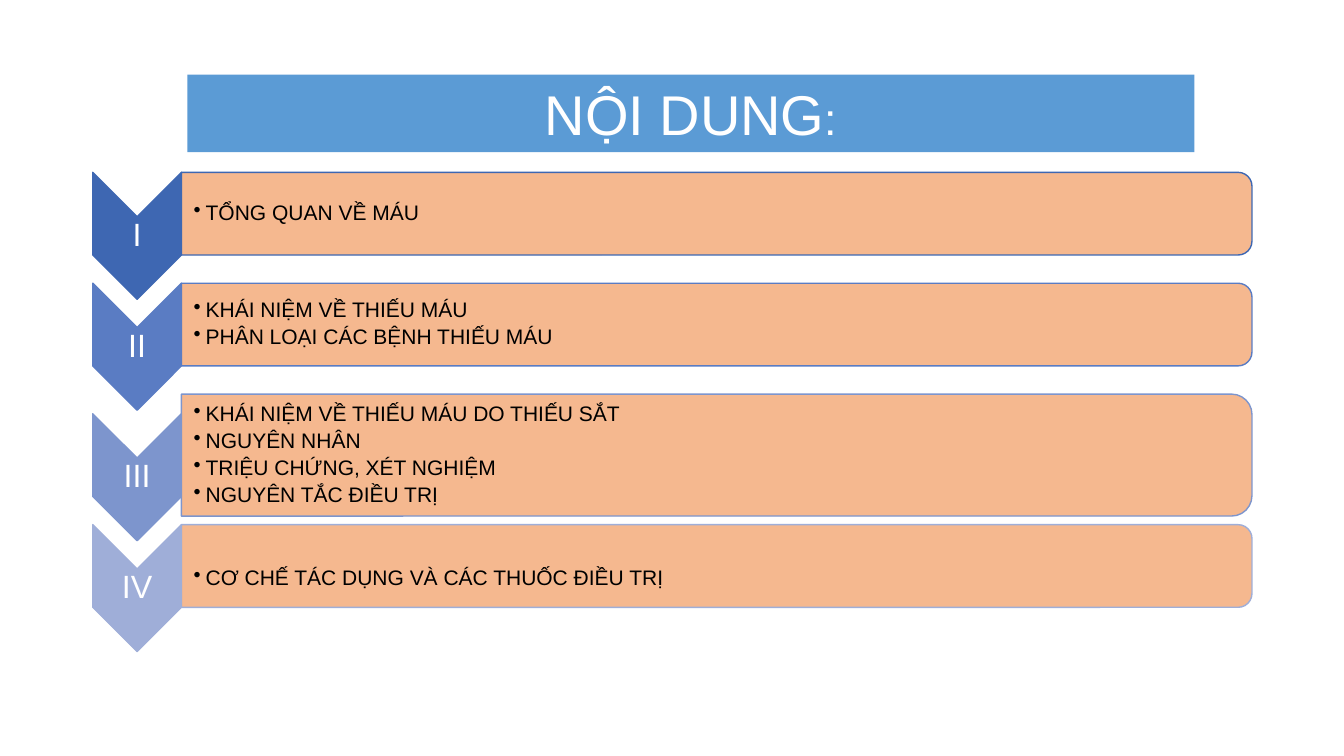
from collections import namedtuple
from pptx import Presentation
from pptx.dml.color import RGBColor
from pptx.enum.shapes import MSO_SHAPE
from pptx.enum.text import MSO_ANCHOR, PP_ALIGN
from pptx.oxml.ns import qn
from pptx.util import Inches, Pt
from lxml.etree import SubElement

Box = namedtuple("Box", "x y w h")

CELL = Inches(0.1)  # side of one grid square
COLS, ROWS = 133.33, 75


class Theme:
    font = "Arial"
    white, black = "FFFFFF", "000000"
    banner, bar = "5B9BD5", "F4B183"
    steps = ["3E67B2", "5A7CC3", "7D95CD", "9FAED8"]
    title, colon, mark, item = 40, 32, 23, 15


TOPICS = [
    ("I", ["TỔNG QUAN VỀ MÁU"]),
    ("II", ["KHÁI NIỆM VỀ THIẾU MÁU", "PHÂN LOẠI CÁC BỆNH THIẾU MÁU"]),
    ("III", ["KHÁI NIỆM VỀ THIẾU MÁU DO THIẾU SẮT", "NGUYÊN NHÂN",
             "TRIỆU CHỨNG, XÉT NGHIỆM", "NGUYÊN TẮC ĐIỀU TRỊ"]),
    ("IV", ["CƠ CHẾ TÁC DỤNG VÀ CÁC THUỐC ĐIỀU TRỊ"]),
]


def grid(*cells):
    return [round(n * CELL) for n in cells]


def shape(parts, kind, box, fill, line=None, turn=False, alpha=None):
    """Draw a preset that fills the box, even when turned by 90 degrees."""
    x, y, w, h = box
    if turn:
        x, y, w, h = x + (w - h) / 2, y + (h - w) / 2, h, w
    item = parts.add_shape(kind, *grid(x, y, w, h))
    item.rotation = 90 if turn else 0
    item.shadow.inherit = False
    item.fill.solid()
    item.fill.fore_color.rgb = RGBColor.from_string(fill)
    if alpha:
        tone = item.fill._xPr.find(".//" + qn("a:srgbClr"))
        SubElement(tone, qn("a:alpha"), val=str(alpha * 1000))
    if line:
        item.line.color.rgb = RGBColor.from_string(line)
        item.line.width = Pt(1)
    else:
        item.line.fill.background()
    return item


def write(frame, lines, color, align=PP_ALIGN.LEFT, pads=None,
          space=1, after=0, bullet=False):
    """Fill a frame with lines, each a list of (text, size) runs."""
    frame.word_wrap = True
    frame.vertical_anchor = MSO_ANCHOR.MIDDLE
    if pads:
        (frame.margin_left, frame.margin_top,
         frame.margin_right, frame.margin_bottom) = grid(*pads)
    for i, runs in enumerate(lines):
        para = frame.add_paragraph() if i else frame.paragraphs[0]
        para.alignment = align
        para.line_spacing = space
        para.space_after = Pt(after)
        if bullet:
            props = para._p.get_or_add_pPr()
            props.set("marL", str(Inches(0.12)))
            props.set("indent", str(-Inches(0.12)))
            SubElement(props, qn("a:buChar"), char="•")
        for text, size in runs:
            run = para.add_run()
            run.text = text
            run.font.size = Pt(size)
            run.font.name = Theme.font
            run.font.color.rgb = RGBColor.from_string(color)


def banner(parts, box):
    item = shape(parts, MSO_SHAPE.RECTANGLE, box, Theme.banner)
    write(item.text_frame, [[("NỘI DUNG", Theme.title), (":", Theme.colon)]],
          Theme.white, PP_ALIGN.CENTER)


def arrow(parts, box, mark, tone):
    shape(parts, MSO_SHAPE.CHEVRON, box, tone, tone, turn=True)
    label = parts.add_textbox(*grid(box.x, box.y + box.w / 2,
                                    box.w, box.h - box.w))
    write(label.text_frame, [[(mark, Theme.mark)]], Theme.white,
          PP_ALIGN.CENTER, (0.2, 0.2, 0.2, 0.2), space=0.9)


def panel(parts, box, items, tone, drop):
    shape(parts, MSO_SHAPE.ROUND_2_SAME_RECTANGLE, box, Theme.bar, tone,
          turn=True, alpha=90)
    body = parts.add_textbox(*grid(box.x, box.y + box.h * 0.05,
                                   box.w - 0.4, box.h * 0.9))
    write(body.text_frame, [[(text, Theme.item)] for text in items],
          Theme.black, pads=(1.2, 0.1 + drop, 0.1, 0.1),
          space=0.9, after=3, bullet=True)


def agenda(parts, box):
    """Stack the topics; a tall panel pushes its arrow and the next row down."""
    wide, tall, step, low = 8.8, 12.6, 11, 8.2
    y = box.y
    for (mark, items), tone in zip(TOPICS, Theme.steps):
        high = 12.1 if len(items) > 2 else low
        shift = (high - low) / 2
        drop = 2.6 if mark == "IV" else 0
        arrow(parts, Box(box.x, y + shift, wide, tall), mark, tone)
        panel(parts, Box(box.x + wide, y, box.w - wide, high),
              items, tone, drop)
        y += step + shift


def main():
    deck = Presentation()
    deck.slide_width, deck.slide_height = grid(COLS, ROWS)
    slide = deck.slides.add_slide(deck.slide_layouts[6])
    agenda(slide.shapes.add_group_shape().shapes, Box(9.2, 17.1, 115, 47.6))
    banner(slide.shapes, Box(18.6, 7.4, 99.9, 7.7))
    deck.save("out.pptx")


if __name__ == "__main__":
    main()
